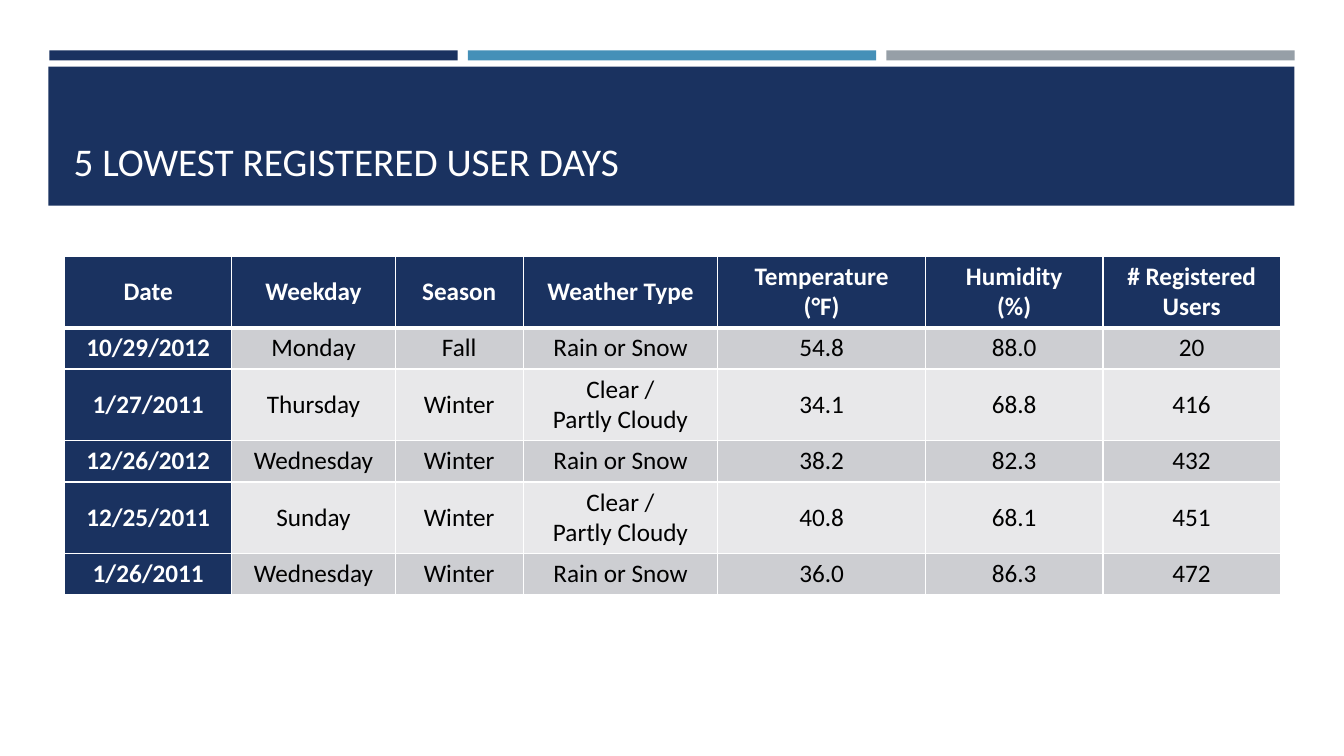
from lxml.etree import SubElement
from pptx import Presentation
from pptx.dml.color import RGBColor
from pptx.enum.shapes import MSO_SHAPE
from pptx.enum.text import MSO_ANCHOR, MSO_AUTO_SIZE, PP_ALIGN
from pptx.oxml.ns import qn
from pptx.util import Inches, Pt

COLORS = {
    "navy": "1A3260",
    "blue": "4590B8",
    "gray": "969FA7",
    "dark_band": "CDCED2",
    "light_band": "E8E8EA",
    "white": "FFFFFF",
    "black": "000000",
}
FONT = "Calibri"
COLUMN_WIDTHS = [1.66, 1.62, 1.27, 1.93, 2.06, 1.76, 1.76]
ROW_HEIGHTS = [0.7, 0.41, 0.7, 0.41, 0.7, 0.41]
ROWS = [
    ["Date", "Weekday", "Season", "Weather Type", "Temperature\n(°F)",
     "Humidity\n(%)", "# Registered Users"],
    ["10/29/2012", "Monday", "Fall", "Rain or Snow", "54.8", "88.0", "20"],
    ["1/27/2011", "Thursday", "Winter", "Clear /\nPartly Cloudy", "34.1", "68.8", "416"],
    ["12/26/2012", "Wednesday", "Winter", "Rain or Snow", "38.2", "82.3", "432"],
    ["12/25/2011", "Sunday", "Winter", "Clear /\nPartly Cloudy", "40.8", "68.1", "451"],
    ["1/26/2011", "Wednesday", "Winter", "Rain or Snow", "36.0", "86.3", "472"],
]


def rgb(name):
    return RGBColor.from_string(COLORS[name])


def format_text(frame, size, color, align, bold=False):
    for para in frame.paragraphs:
        para.alignment = align
        for span in para.runs:
            span.font.name = FONT
            span.font.size = Pt(size)
            span.font.bold = bold
            span.font.color.rgb = rgb(color)


def add_bar(page, left, top, width, height, color):
    bar = page.shapes.add_shape(
        MSO_SHAPE.RECTANGLE, Inches(left), Inches(top), Inches(width), Inches(height))
    bar.shadow.inherit = False
    bar.fill.solid()
    bar.fill.fore_color.rgb = rgb(color)
    bar.line.fill.background()
    page.shapes.title.element.addprevious(bar.element)


def add_stripes(page, left, top, width, height, gap=0.1):
    colors = ["navy", "blue", "gray"]
    stripe = (width - gap * (len(colors) - 1)) / len(colors)
    for index, color in enumerate(colors):
        add_bar(page, left + index * (stripe + gap), top, stripe, height, color)


def add_title_band(page, left, top, width, height, text):
    add_bar(page, left, top, width, height, "navy")
    title = page.shapes.title
    title.left, title.top = Inches(left + 0.15), Inches(top + 0.14)
    title.width, title.height = Inches(width - 0.3), Inches(height - 0.3)
    frame = title.text_frame
    frame.text = text
    frame.word_wrap = True
    frame.auto_size = MSO_AUTO_SIZE.NONE
    frame.vertical_anchor = MSO_ANCHOR.BOTTOM
    format_text(frame, 28, "white", PP_ALIGN.LEFT)


def add_borders(cell, top, bottom):
    properties = cell._tc.get_or_add_tcPr()
    for side, points in {"lnL": 1, "lnR": 1, "lnT": top, "lnB": bottom}.items():
        line = SubElement(properties, qn(f"a:{side}"), w=str(Pt(points)))
        fill = SubElement(line, qn("a:solidFill"))
        SubElement(fill, qn("a:srgbClr"), val=COLORS["white"])


def format_cell(cell, row, column):
    heading = row == 0 or column == 0
    band = "dark_band" if row % 2 else "light_band"
    add_borders(cell, top=3 if row == 1 else 1, bottom=3 if row == 0 else 1)
    cell.fill.solid()
    cell.fill.fore_color.rgb = rgb("navy" if heading else band)
    cell.vertical_anchor = MSO_ANCHOR.MIDDLE
    format_text(cell.text_frame, 18, "white" if heading else "black",
                PP_ALIGN.CENTER, heading)


def add_days_table(page, left, top):
    table = page.shapes.add_table(
        len(ROWS), len(COLUMN_WIDTHS), Inches(left), Inches(top),
        Inches(sum(COLUMN_WIDTHS)), Inches(sum(ROW_HEIGHTS))).table
    for column, width in zip(table.columns, COLUMN_WIDTHS):
        column.width = Inches(width)
    for row, height in zip(table.rows, ROW_HEIGHTS):
        row.height = Inches(height)
    for row, values in enumerate(ROWS):
        for column, value in enumerate(values):
            cell = table.cell(row, column)
            cell.text_frame.text = value
            format_cell(cell, row, column)


def main():
    deck = Presentation()
    deck.slide_width, deck.slide_height = Inches(13.33), Inches(7.5)
    page = deck.slides.add_slide(deck.slide_layouts[5])
    page.background.fill.solid()
    page.background.fill.fore_color.rgb = rgb("white")
    add_stripes(page, 0.49, 0.5, 12.35, 0.1)
    add_title_band(page, 0.48, 0.66, 12.36, 1.38, "5 LOWEST REGISTERED USER DAYS")
    add_days_table(page, 0.64, 2.54)
    deck.save("out.pptx")


if __name__ == "__main__":
    main()
